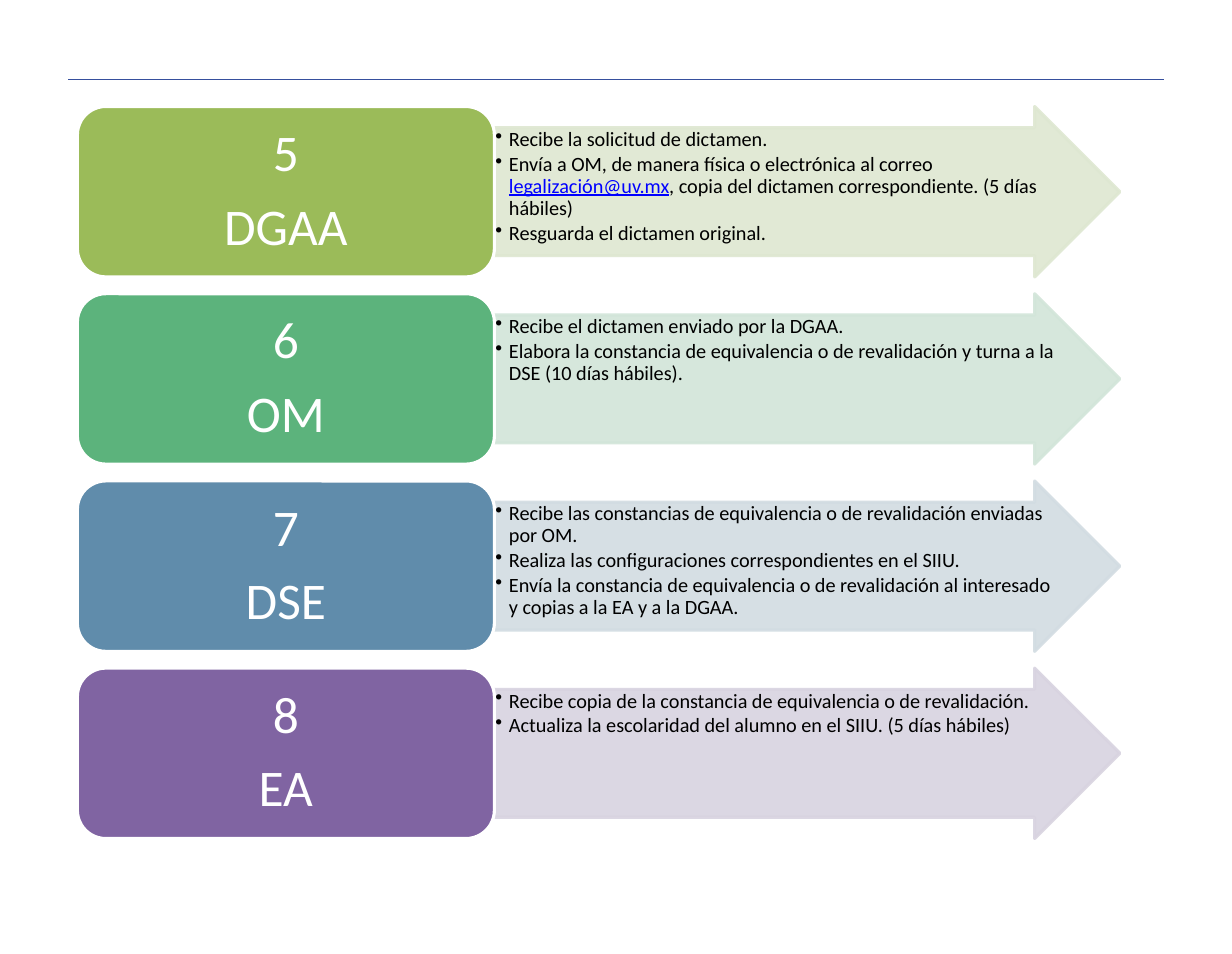
from dataclasses import dataclass

from lxml import etree
from pptx import Presentation
from pptx import util as u
from pptx.dml.color import RGBColor
from pptx.enum import shapes, text
from pptx.oxml import ns

STEPS = [
    ("5", "DGAA", "9BBB59", "DEE7D1", [
        ["Recibe la solicitud de dictamen."],
        ["Envía a OM, de manera física o electrónica al correo ",
         "legalización@uv.mx",
         ", copia del dictamen correspondiente. (5 días hábiles)"],
        ["Resguarda el dictamen original."],
    ]),
    ("6", "OM", "5CB37C", "D2E5D9", [
        ["Recibe el dictamen enviado por la DGAA."],
        ["Elabora la constancia de equivalencia o de revalidación y turna a la "
         "DSE (10 días hábiles)."],
    ]),
    ("7", "DSE", "608CAB", "D2DCE2", [
        ["Recibe las constancias de equivalencia o de revalidación enviadas por OM."],
        ["Realiza las configuraciones correspondientes en el SIIU."],
        ["Envía la constancia de equivalencia o de revalidación al interesado "
         "y copias a la EA y a la DGAA."],
    ]),
    ("8", "EA", "8064A2", "D8D3E0", [
        ["Recibe copia de la constancia de equivalencia o de revalidación."],
        ["Actualiza la escolaridad del alumno en el SIIU. (5 días hábiles)"],
    ]),
]


@dataclass(frozen=True)
class Theme:
    font: str = "Calibri"
    light: str = "FFFFFF"
    dark: str = "000000"
    email: str = "0000FF"
    rule: str = "364F9D"
    label_size: int = 33
    task_size: int = 13
    outline: int = 2
    opacity: int = 90


THEME = Theme()
WIDTH, HEIGHT = 10.99, 8.51
RULE_LEFT, RULE_RIGHT, RULE_TOP = 0.61, 10.38, 0.71
LEFT, TOP = 0.69, 0.95
UNIT_WIDTH, TASKS_WIDTH = 3.72, 5.58
ROW_HEIGHT, ROW_PITCH = 1.52, 1.67
HANG = 0.12


def add_block(slide, preset, left, top, width, fill, line):
    block = slide.shapes.add_shape(
        preset, *(u.Inches(v) for v in (left, top, width, ROW_HEIGHT)))
    block.shadow.inherit = False
    block.fill.solid()
    block.fill.fore_color.rgb = RGBColor.from_string(fill)
    block.line.color.rgb = RGBColor.from_string(line)
    block.line.width = u.Pt(THEME.outline)
    block.text_frame.word_wrap = True
    return block


def set_margins(frame, across, down):
    frame.margin_left = frame.margin_right = u.Inches(across)
    frame.margin_top = frame.margin_bottom = u.Inches(down)


def style(paragraph, size, color, align, gap):
    paragraph.alignment = align
    paragraph.line_spacing = 0.9
    paragraph.space_after = u.Pt(size * gap)
    paragraph.font.name = THEME.font
    paragraph.font.size = u.Pt(size)
    paragraph.font.color.rgb = RGBColor.from_string(color)


def paragraphs(frame, count):
    return [frame.paragraphs[0]] + [frame.add_paragraph() for _ in range(count - 1)]


def add_tasks(slide, top, tint, tasks):
    arrow = add_block(slide, shapes.MSO_SHAPE.RIGHT_ARROW, LEFT + UNIT_WIDTH, top,
                      TASKS_WIDTH, tint, tint)
    arrow.adjustments[0], arrow.adjustments[1] = 0.75, 0.5
    for color in arrow._element.spPr.iter(ns.qn("a:srgbClr")):
        etree.SubElement(color, ns.qn("a:alpha"), val=str(THEME.opacity * 1000))
    frame = arrow.text_frame
    frame.vertical_anchor = text.MSO_ANCHOR.TOP
    set_margins(frame, 0.01, 0.01)
    for paragraph, parts in zip(paragraphs(frame, len(tasks)), tasks):
        paragraph.level = 1
        props = paragraph._p.get_or_add_pPr()
        props.set("marL", str(u.Inches(HANG)))
        props.set("indent", str(-u.Inches(HANG)))
        etree.SubElement(props, ns.qn("a:buChar"), char="•")
        style(paragraph, THEME.task_size, THEME.dark, text.PP_ALIGN.LEFT, 0.15)
        for part in parts:
            run = paragraph.add_run()
            run.text = part
            if "@" in part:
                run.font.underline = True
                run.font.color.rgb = RGBColor.from_string(THEME.email)


def add_unit(slide, top, color, labels):
    unit = add_block(slide, shapes.MSO_SHAPE.ROUNDED_RECTANGLE, LEFT, top,
                     UNIT_WIDTH, color, THEME.light)
    frame = unit.text_frame
    frame.vertical_anchor = text.MSO_ANCHOR.MIDDLE
    set_margins(frame, 0.14, 0.07)
    for paragraph, label in zip(paragraphs(frame, len(labels)), labels):
        paragraph.text = label
        style(paragraph, THEME.label_size, THEME.light, text.PP_ALIGN.CENTER, 0.35)


def main():
    deck = Presentation()
    deck.slide_width, deck.slide_height = u.Inches(WIDTH), u.Inches(HEIGHT)
    slide = deck.slides.add_slide(deck.slide_layouts[6])

    rule = slide.shapes.add_connector(
        shapes.MSO_CONNECTOR.STRAIGHT,
        *(u.Inches(v) for v in (RULE_LEFT, RULE_TOP, RULE_RIGHT, RULE_TOP)))
    rule.line.color.rgb = RGBColor.from_string(THEME.rule)
    rule.line.width = u.Pt(0.75)
    etree.SubElement(rule._element.spPr, ns.qn("a:effectLst"))

    for row, (number, name, color, tint, tasks) in enumerate(STEPS):
        top = TOP + row * ROW_PITCH
        add_tasks(slide, top, tint, tasks)
        add_unit(slide, top, color, (number, name))

    deck.save("out.pptx")


if __name__ == "__main__":
    main()
